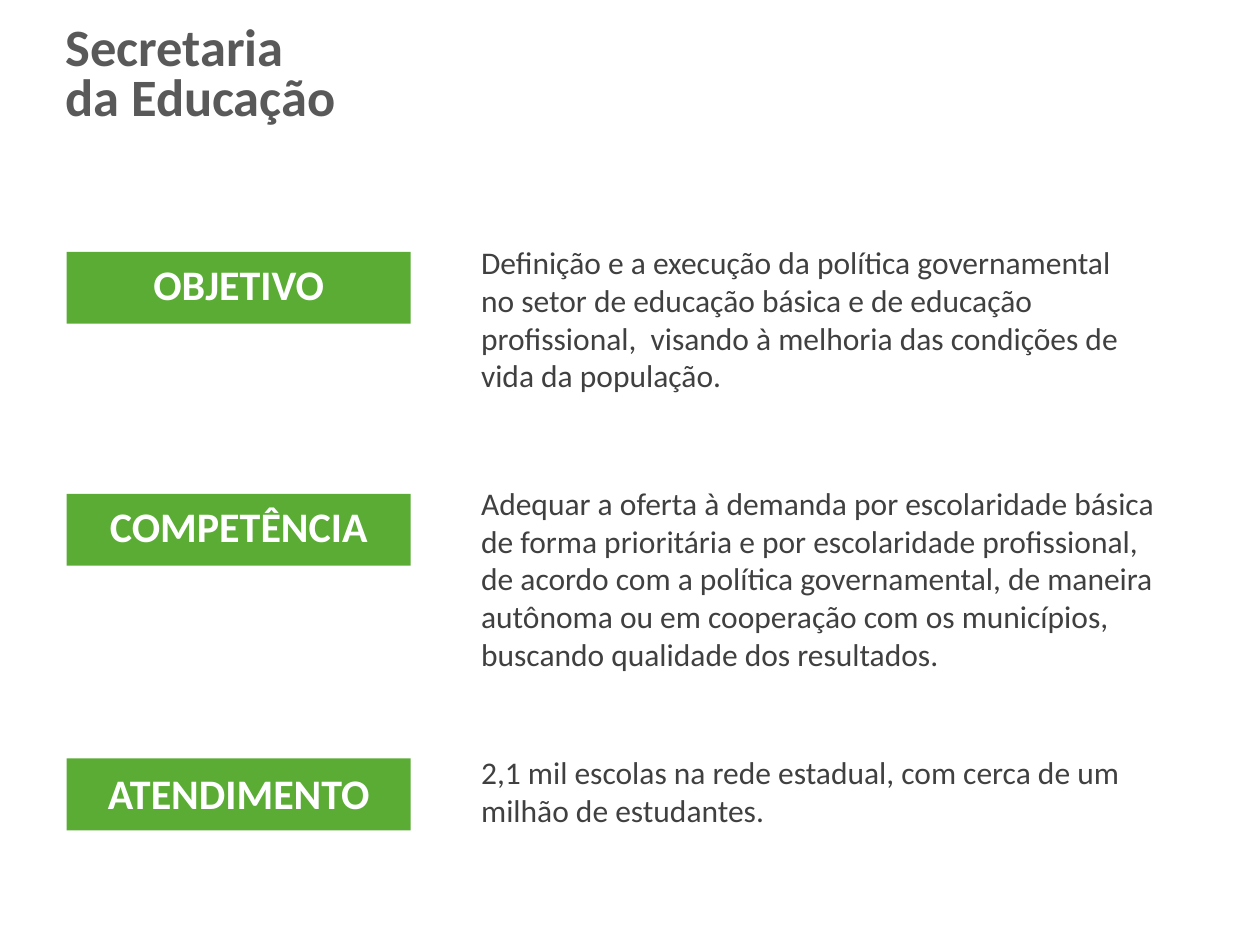
from dataclasses import dataclass

from pptx import Presentation
from pptx import util as u
from pptx.dml.color import RGBColor
from pptx.enum import shapes, text


@dataclass(frozen=True)
class Theme:
    font: str = "Calibri"
    green: RGBColor = RGBColor(0x5B, 0xAC, 0x35)
    white: RGBColor = RGBColor(0xFF, 0xFF, 0xFF)
    title_gray: RGBColor = RGBColor(0x59, 0x59, 0x59)
    body_gray: RGBColor = RGBColor(0x40, 0x40, 0x40)
    title_size: int = 30
    label_size: int = 24
    body_size: int = 18


theme = Theme()

presentation = Presentation()
presentation.slide_width = u.Inches(10)
presentation.slide_height = u.Inches(7.5)
slide = presentation.slides.add_slide(presentation.slide_layouts[6])


def add_text(content, left, top, width, height, *, size, color, bold=False,
             align=text.PP_ALIGN.LEFT, anchor=text.MSO_ANCHOR.TOP, line_spacing=1.0):
    box = slide.shapes.add_textbox(u.Inches(left), u.Inches(top),
                                   u.Inches(width), u.Inches(height))
    frame = box.text_frame
    frame.word_wrap = True
    frame.vertical_anchor = anchor
    paragraph = frame.paragraphs[0]
    paragraph.text = content
    paragraph.alignment = align
    paragraph.line_spacing = line_spacing
    font = paragraph.font
    font.name, font.size, font.bold = theme.font, u.Pt(size), bold
    font.color.rgb = color


# Title
add_text("Secretaria\vda Educação", 0.42, 0.11, 3.09, 0.99, size=theme.title_size,
         color=theme.title_gray, bold=True, anchor=text.MSO_ANCHOR.MIDDLE,
         line_spacing=0.8)

# Sections: label, bar top, label top, description, its top, width and height
sections = [
    ("OBJETIVO", 2.0, 2.0,
     "Definição e a execução da política governamental no setor de educação básica "
     "e de educação profissional,  visando à melhoria das condições de vida da "
     "população.", 1.88, 5.27, 1.31),
    ("COMPETÊNCIA", 3.92, 3.92,
     "Adequar a oferta à demanda por escolaridade básica de forma prioritária e por "
     "escolaridade profissional, de acordo com a política governamental, de maneira "
     "autônoma ou em cooperação com os municípios, buscando qualidade dos "
     "resultados.", 3.79, 5.58, 1.62),
    ("ATENDIMENTO", 6.02, 6.04,
     "2,1 mil escolas na rede estadual, com cerca de um milhão de estudantes.",
     5.93, 5.58, 0.71),
]
bar_left, bar_width, bar_height = 0.53, 2.73, 0.57

for label, bar_top, label_top, description, top, width, height in sections:
    # Green bar
    bar = slide.shapes.add_shape(shapes.MSO_SHAPE.RECTANGLE,
                                 u.Inches(bar_left), u.Inches(bar_top),
                                 u.Inches(bar_width), u.Inches(bar_height))
    bar.shadow.inherit = False
    bar.fill.solid()
    bar.fill.fore_color.rgb = theme.green
    bar.line.fill.background()

    # Label centred on the bar, description to its right
    add_text(label, bar_left, label_top, bar_width, 0.5, size=theme.label_size,
             color=theme.white, bold=True, align=text.PP_ALIGN.CENTER)
    add_text(description, 3.72, top, width, height, size=theme.body_size,
             color=theme.body_gray)

presentation.save("out.pptx")
